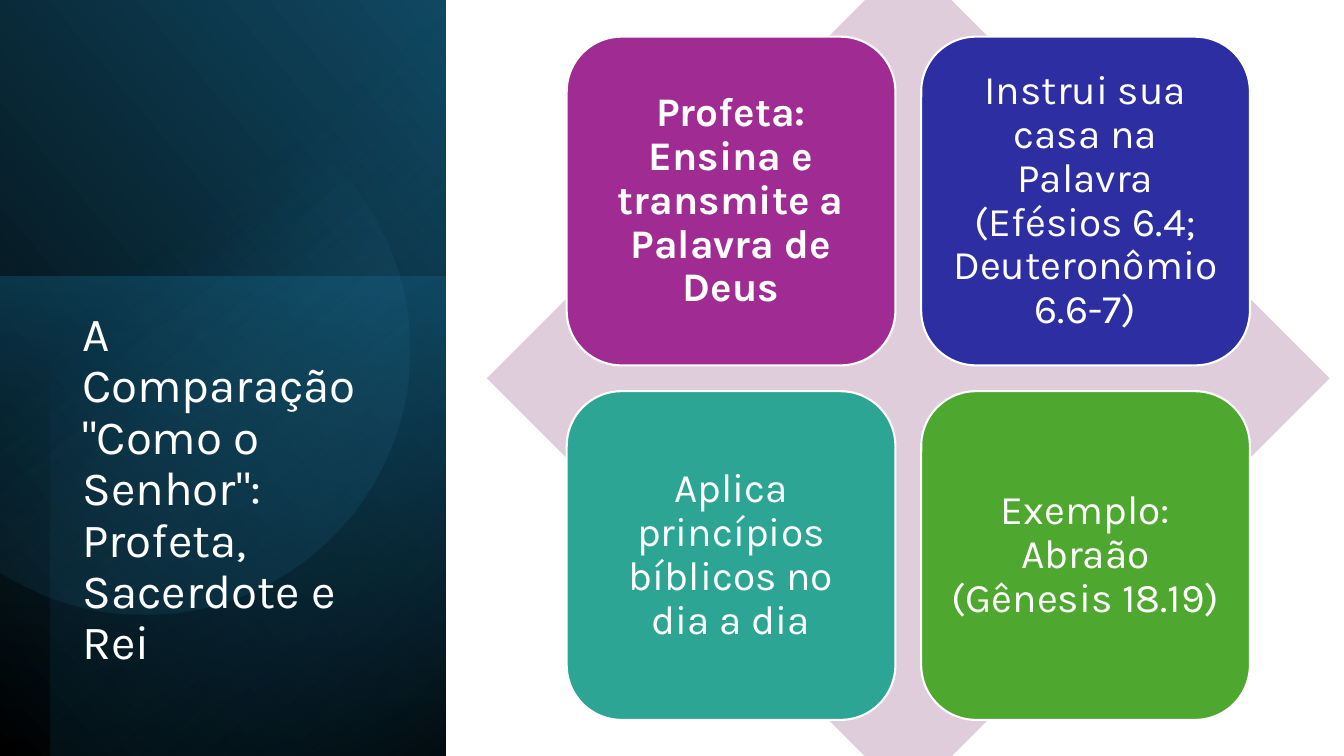
from dataclasses import dataclass
from math import acos, cos, pi, sin

from pptx import Presentation
from pptx.dml.color import RGBColor
from pptx.enum import shapes as es, text as et
from pptx.oxml import ns
from pptx.util import Pt
from lxml import etree

FONT = "Karla"
WHITE = RGBColor(0xFF, 0xFF, 0xFF)
BLACK = RGBColor(0x00, 0x00, 0x00)
NAVY = RGBColor(0x10, 0x48, 0x62)
TEAL = RGBColor(0x15, 0x60, 0x82)
DEEP = RGBColor(0x0B, 0x30, 0x41)
SKY = RGBColor(0x46, 0xB1, 0xE1)
MAUVE = RGBColor(0xDF, 0xCD, 0xDC)
PURPLE = RGBColor(0xA0, 0x2B, 0x93)
INDIGO = RGBColor(0x2C, 0x2E, 0xA2)
JADE = RGBColor(0x2D, 0xA5, 0x94)
GREEN = RGBColor(0x4E, 0xA7, 0x2E)

MID_X, MID_Y = 648.8, 270.2
SIDE, GAP, SPAN = 234.8, 18.4, 602


@dataclass(frozen=True)
class Stop:
    place: float
    color: RGBColor
    alpha: int = 100


@dataclass(frozen=True)
class Panel:
    left: float
    top: float
    width: float
    height: float
    turn: int
    flip: bool
    angle: float
    stops: tuple[Stop, Stop]


@dataclass(frozen=True)
class Tile:
    text: str
    color: RGBColor
    bold: bool = False


PANELS = [
    Panel(-111.6, 111.6, 541.4, 318.2, 90, True, 310,
          (Stop(0, BLACK), Stop(1, NAVY))),
    Panel(-12.2, 209.5, 342.7, 318.2, 270, False, 190,
          (Stop(0, TEAL, 50), Stop(1, DEEP, 0))),
    Panel(-92.9, 128.9, 540, 282.2, 270, True, 220,
          (Stop(0, BLACK, 59), Stop(0.69, TEAL, 0))),
]
GLOW = (Stop(0.39, SKY, 0), Stop(1, NAVY, 26))
TITLE = 'A Comparação "Como o Senhor": Profeta, Sacerdote e Rei'
TILES = [
    Tile("Profeta: Ensina e transmite a Palavra de Deus", PURPLE, True),
    Tile("Instrui sua casa na Palavra (Efésios 6.4; Deuteronômio 6.6-7)", INDIGO),
    Tile("Aplica princípios bíblicos no dia a dia", JADE),
    Tile("Exemplo: Abraão (Gênesis 18.19)", GREEN),
]


def blend(shape, stops: tuple[Stop, Stop], angle: float) -> None:
    """Fill with a translucent gradient; the angle runs clockwise."""
    shape.shadow.inherit = False
    shape.line.fill.background()
    shape.fill.gradient()
    shape.fill.gradient_angle = 360 - angle
    for mark, stop in zip(shape.fill.gradient_stops, stops):
        mark.position = stop.place
        mark.color.rgb = stop.color
    tints = shape._element.spPr.iter(ns.qn("a:srgbClr"))
    for tint, stop in zip(list(tints), stops):
        alpha = etree.SubElement(tint, ns.qn("a:alpha"))
        alpha.set("val", str(stop.alpha * 1000))


def add_panel(slide, panel: Panel) -> None:
    shape = slide.shapes.add_shape(
        es.MSO_SHAPE.RECTANGLE, Pt(panel.left), Pt(panel.top),
        Pt(panel.width), Pt(panel.height))
    shape.rotation = panel.turn
    if panel.flip:
        shape._element.spPr.xfrm.set("flipH", "1")
    blend(shape, panel.stops, panel.angle)


def add_glow(slide, mid_x: float, mid_y: float, radius: float) -> None:
    """Draw a disc cut off at the left edge of the slide."""
    reach = acos(-mid_x / radius)
    steps = 90
    turns = [reach * (2 * i / steps - 1) for i in range(steps + 1)]
    points = [(Pt(mid_x + radius * cos(t)), Pt(mid_y + radius * sin(t)))
              for t in turns]
    form = slide.shapes.build_freeform(*points[0])
    form.add_line_segments(points[1:], close=True)
    blend(form.convert_to_shape(), GLOW, 51.6)


def write(frame, words: str, size: float, bold: bool = False):
    frame.word_wrap = True
    para = frame.paragraphs[0]
    para.text = words
    para.line_spacing = 0.9
    para.font.name = FONT
    para.font.size = Pt(size)
    para.font.bold = bold
    para.font.color.rgb = WHITE
    return para


def add_block(slide, kind, left: float, top: float, side: float, color: RGBColor):
    shape = slide.shapes.add_shape(kind, Pt(left), Pt(top), Pt(side), Pt(side))
    shape.shadow.inherit = False
    shape.fill.solid()
    shape.fill.fore_color.rgb = color
    shape.line.fill.background()
    return shape


def add_tile(slide, tile: Tile, row: int, col: int) -> None:
    start = SIDE + GAP / 2
    step = SIDE + GAP
    shape = add_block(slide, es.MSO_SHAPE.ROUNDED_RECTANGLE,
                      MID_X - start + col * step, MID_Y - start + row * step,
                      SIDE, tile.color)
    shape.line.color.rgb = WHITE
    shape.line.width = Pt(1.5)
    frame = shape.text_frame
    frame.margin_left = frame.margin_right = Pt(8.7)
    frame.margin_top = frame.margin_bottom = Pt(8.7)
    frame.vertical_anchor = et.MSO_ANCHOR.MIDDLE
    para = write(frame, tile.text, 29, tile.bold)
    para.alignment = et.PP_ALIGN.CENTER


def main() -> None:
    deck = Presentation()
    deck.slide_width, deck.slide_height = Pt(960), Pt(540)
    slide = deck.slides.add_slide(deck.slide_layouts[6])
    for panel in PANELS:
        add_panel(slide, panel)
    add_glow(slide, 103, 250, 189.3)
    title = slide.shapes.add_textbox(Pt(51.8), Pt(218.2), Pt(226.8), Pt(241.9))
    write(title.text_frame, TITLE, 34)
    add_block(slide, es.MSO_SHAPE.DIAMOND, MID_X - SPAN / 2, MID_Y - SPAN / 2,
              SPAN, MAUVE)
    for i, tile in enumerate(TILES):
        add_tile(slide, tile, *divmod(i, 2))
    deck.save("out.pptx")


if __name__ == "__main__":
    main()
